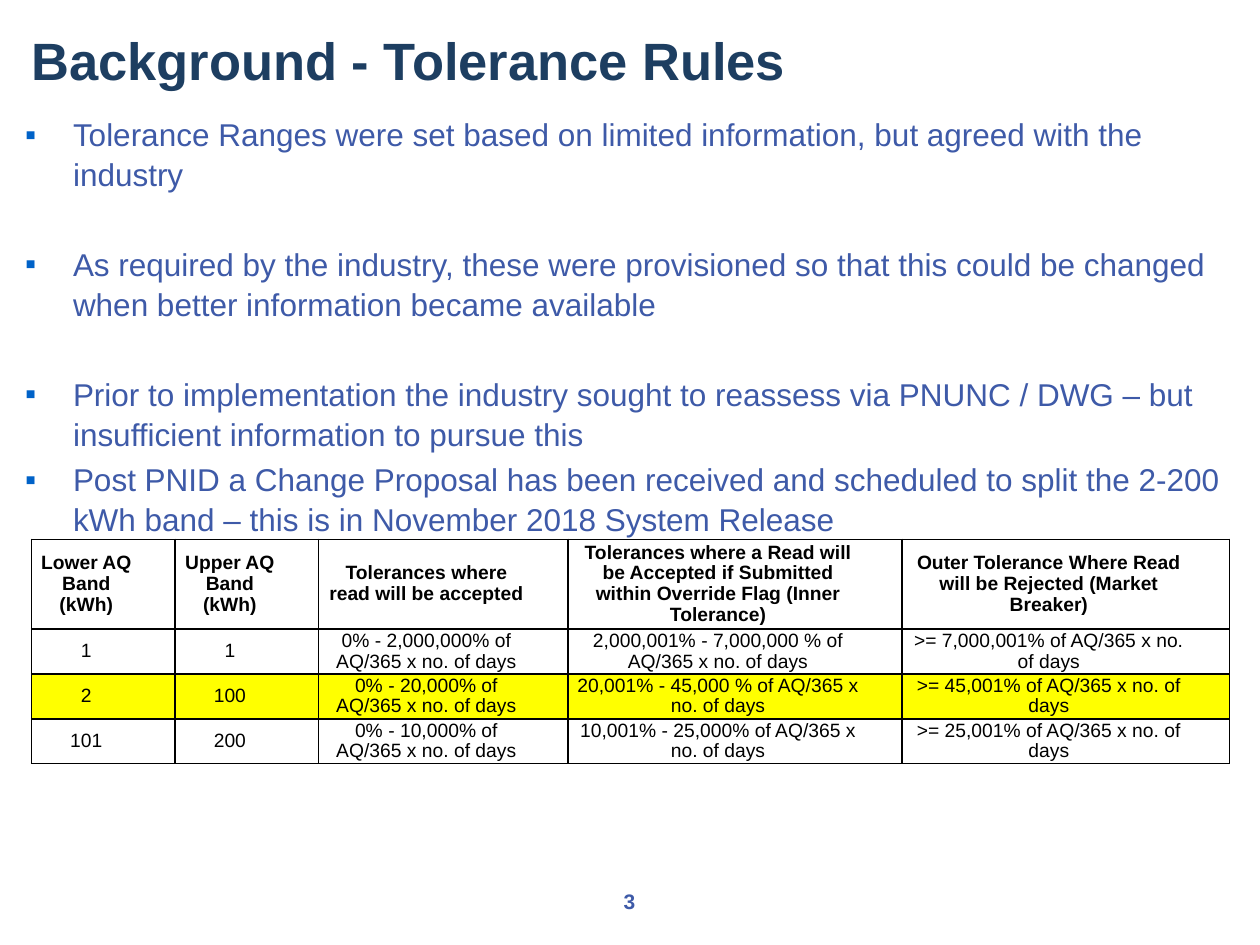
from lxml import etree
from pptx import Presentation
from pptx.dml.color import RGBColor
from pptx.enum.text import MSO_ANCHOR, PP_ALIGN
from pptx.oxml.ns import qn
from pptx.util import Inches, Pt

MIDDLE = MSO_ANCHOR.MIDDLE
TOP = MSO_ANCHOR.TOP
CENTER = PP_ALIGN.CENTER
NAVY = RGBColor(0x1D, 0x3E, 0x61)
BLUE = RGBColor(0x3E, 0x5A, 0xA8)
BULLET_BLUE = RGBColor(0x00, 0x62, 0xC8)
BLACK = RGBColor(0, 0, 0)
YELLOW = RGBColor(0xFF, 0xFF, 0)

deck = Presentation()
deck.slide_width = Inches(10)
deck.slide_height = Inches(7.5)
page = deck.slides.add_slide(deck.slide_layouts[6])


def add_box(left, top, width, height, anchor):
    box = page.shapes.add_textbox(Inches(left), Inches(top), Inches(width), Inches(height))
    frame = box.text_frame
    frame.word_wrap = True
    frame.vertical_anchor = anchor
    frame.margin_left = frame.margin_right = frame.margin_top = frame.margin_bottom = 0
    return frame


def add_span(para, text, size, color, bold=False):
    span = para.add_run()
    span.text = text
    span.font.name = "Arial"
    span.font.size = Pt(size)
    span.font.bold = bold
    span.font.color.rgb = color


title = add_box(0.25, -0.06, 9.5, 1.06, MIDDLE)
add_span(title.paragraphs[0], "Background - Tolerance Rules", 30, NAVY, True)

number = add_box(3.83, 6.95, 2.33, 0.4, MIDDLE)
number.paragraphs[0].alignment = CENTER
add_span(number.paragraphs[0], "3", 12, BLUE, True)

points = [
    (0, "Tolerance Ranges were set based on limited information, but agreed with the industry"),
    (28.8, "As required by the industry, these were provisioned so that this could be changed when better information became available"),
    (28.8, "Prior to implementation the industry sought to reassess via PNUNC / DWG – but insufficient information to pursue this"),
    (3.6, "Post PNID a Change Proposal has been received and scheduled to split the 2-200 kWh band – this is in November 2018 System Release"),
]
body = add_box(0.2, 0.9, 9.5, 5.28, TOP)
for index, (gap, text) in enumerate(points):
    para = body.add_paragraph() if index else body.paragraphs[0]
    para.space_before = Pt(gap)
    para.line_spacing = 1.05
    props = para._p.get_or_add_pPr()
    props.set("marL", str(Inches(0.38)))
    props.set("indent", str(-Inches(0.38)))
    tint = etree.SubElement(props, qn("a:buClr"))
    etree.SubElement(tint, qn("a:srgbClr"), val=str(BULLET_BLUE))
    etree.SubElement(props, qn("a:buFont"), typeface="Arial")
    etree.SubElement(props, qn("a:buChar"), char="▪")
    add_span(para, text, 18, BLUE)

rows = [
    ["Lower AQ Band (kWh)", "Upper AQ Band (kWh)", "Tolerances where read will be accepted",
     "Tolerances where a Read will be Accepted if Submitted within Override Flag (Inner Tolerance)",
     "Outer Tolerance Where Read will be Rejected (Market Breaker)"],
    ["1", "1", "0% - 2,000,000% of AQ/365 x no. of days",
     "2,000,001% - 7,000,000 % of AQ/365 x no. of days", ">= 7,000,001% of AQ/365 x no. of days"],
    ["2", "100", "0% - 20,000% of AQ/365 x no. of days",
     "20,001% - 45,000 % of AQ/365 x no. of days", ">= 45,001% of AQ/365 x no. of days"],
    ["101", "200", "0% - 10,000% of AQ/365 x no. of days",
     "10,001% - 25,000% of AQ/365 x no. of days", ">= 25,001% of AQ/365 x no. of days"],
]
widths = [1.14, 1.14, 1.98, 2.65, 2.6]
heights = [0.68] + [0.35] * 3
HIGHLIGHTED_ROW = 2

table = page.shapes.add_table(
    len(rows), len(widths), Inches(0.25), Inches(4.28),
    Inches(sum(widths)), Inches(sum(heights))).table
for column, width in zip(table.columns, widths):
    column.width = Inches(width)
for row_index, texts in enumerate(rows):
    table.rows[row_index].height = Inches(heights[row_index])
    for column_index, text in enumerate(texts):
        cell = table.cell(row_index, column_index)
        cell.vertical_anchor = MIDDLE
        cell.margin_left = Inches(0.07)
        cell.margin_right = Inches(0.34)
        cell.margin_top = cell.margin_bottom = 0
        para = cell.text_frame.paragraphs[0]
        para.alignment = CENTER
        para.line_spacing = 0.97
        add_span(para, text, 11, BLACK, row_index == 0)
        props = cell._tc.get_or_add_tcPr()
        for side in ("lnL", "lnR", "lnT", "lnB"):
            border = etree.SubElement(props, qn("a:" + side), w=str(Pt(1)))
            paint = etree.SubElement(border, qn("a:solidFill"))
            etree.SubElement(paint, qn("a:srgbClr"), val=str(BLACK))
        if row_index == HIGHLIGHTED_ROW:
            cell.fill.solid()
            cell.fill.fore_color.rgb = YELLOW
        else:
            cell.fill.background()

deck.save("out.pptx")
